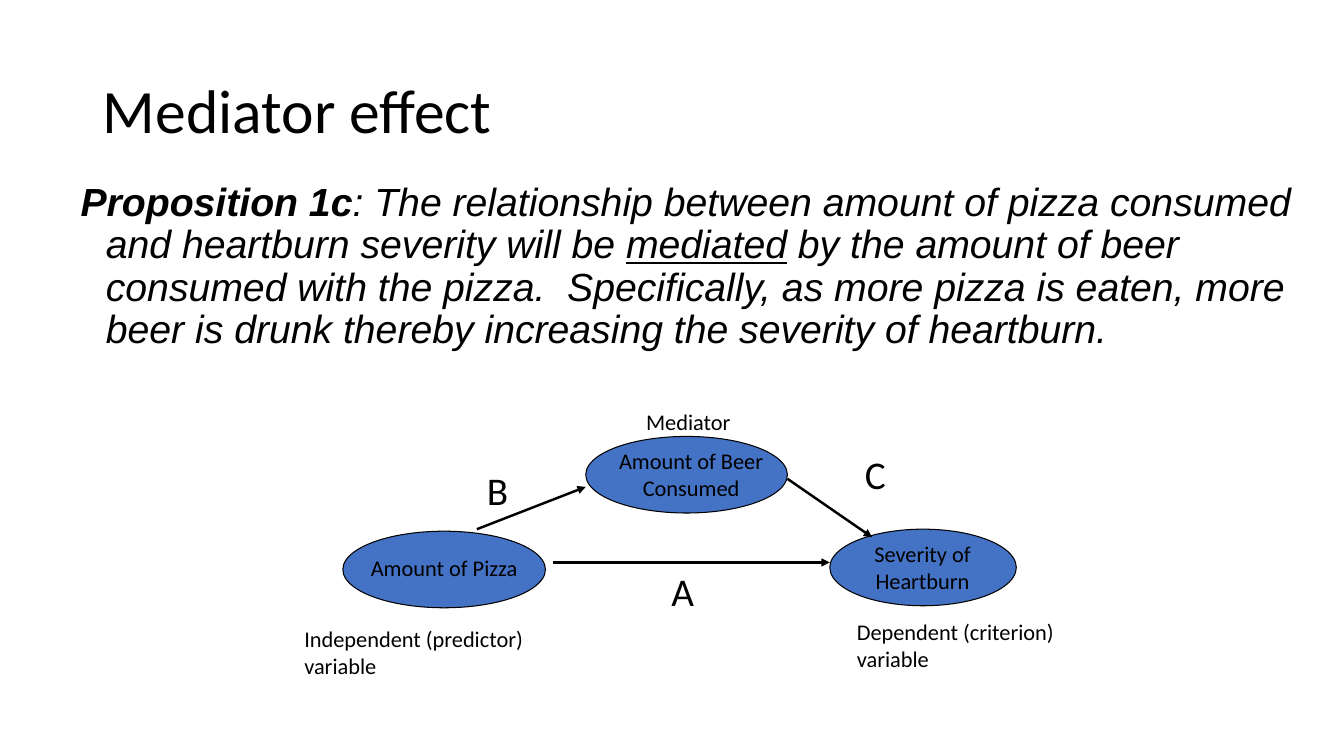
from lxml import etree
from pptx import Presentation
from pptx.dml.color import RGBColor
from pptx.enum.shapes import MSO_CONNECTOR, MSO_SHAPE
from pptx.enum.text import MSO_ANCHOR, MSO_AUTO_SIZE, PP_ALIGN
from pptx.oxml.ns import qn
from pptx.util import Inches, Pt

OVAL = MSO_SHAPE.OVAL
LINE = MSO_CONNECTOR.STRAIGHT
MID, TOP = MSO_ANCHOR.MIDDLE, MSO_ANCHOR.TOP
GROW, FIXED = MSO_AUTO_SIZE.SHAPE_TO_FIT_TEXT, MSO_AUTO_SIZE.NONE
LEFT, CENTER = PP_ALIGN.LEFT, PP_ALIGN.CENTER

COLORS = {"ink": "000000", "node": "4472C4"}


class Page:
    def __init__(self, slide):
        self.slide = slide
        self.font = "Calibri"
        self.ink = RGBColor.from_string(COLORS["ink"])
        self.node = RGBColor.from_string(COLORS["node"])

    def style(self, run, size, font=None):
        run.font.size = Pt(size)
        run.font.name = font or self.font
        run.font.color.rgb = self.ink

    def place(self, shape, box):
        shape.left, shape.top, shape.width, shape.height = map(Inches, box)

    def title(self, text, box):
        shape = self.slide.shapes.title
        self.place(shape, box)
        frame = shape.text_frame
        frame.text = text
        frame.auto_size = FIXED
        frame.vertical_anchor = MID
        para = frame.paragraphs[0]
        para.alignment = LEFT
        para.line_spacing = 0.9
        self.style(para.runs[0], 44)

    def body(self, parts, box):
        shape = self.slide.placeholders[1]
        self.place(shape, box)
        frame = shape.text_frame
        frame.auto_size = FIXED
        frame.vertical_anchor = TOP
        para = frame.paragraphs[0]
        para.alignment = LEFT
        para.line_spacing = 0.9
        para.space_before = Pt(10)
        props = para._p.get_or_add_pPr()
        props.set("marL", str(Inches(0.25)))
        props.set("indent", str(Inches(-0.25)))
        etree.SubElement(props, qn("a:buNone"))
        for text, bold, under in parts:
            run = para.add_run()
            run.text = text
            self.style(run, 28, "Arial")
            run.font.italic = True
            run.font.bold = bold
            run.font.underline = under

    def oval(self, box):
        shape = self.slide.shapes.add_shape(OVAL, *map(Inches, box))
        shape.shadow.inherit = False
        shape.fill.solid()
        shape.fill.fore_color.rgb = self.node
        shape.line.color.rgb = self.ink
        shape.line.width = Pt(0.75)

    def label(self, text, box, size=16, align=LEFT):
        shape = self.slide.shapes.add_textbox(*map(Inches, box))
        frame = shape.text_frame
        frame.text = text
        frame.word_wrap = True
        frame.auto_size = GROW
        para = frame.paragraphs[0]
        para.alignment = align
        self.style(para.runs[0], size)

    def arrow(self, start, end):
        link = self.slide.shapes.add_connector(LINE, *map(Inches, start + end))
        link.line.color.rgb = self.ink
        link.line.width = Pt(1.75)
        edge = link.line._get_or_add_ln()
        etree.SubElement(edge, qn("a:tailEnd"), type="triangle")
        etree.SubElement(link._element.spPr, qn("a:effectLst"))


def main():
    deck = Presentation()
    deck.slide_width, deck.slide_height = Inches(13.33), Inches(7.5)
    page = Page(deck.slides.add_slide(deck.slide_layouts[1]))

    page.title("Mediator effect", (0.92, 0.4, 11.5, 1.45))
    page.body([
        ("Proposition 1c", True, False),
        (": The relationship between amount of pizza consumed and heartburn "
         "severity will be ", False, False),
        ("mediated", False, True),
        (" by the amount of beer consumed with the pizza.  Specifically, as "
         "more pizza is eaten, more beer is drunk thereby increasing the "
         "severity of heartburn.", False, False),
    ], (0.7, 1.76, 12.64, 2.41))

    nodes = [
        ("Amount of Pizza", (3.4, 5.27, 2.01, 0.76), (3.48, 5.45, 1.85, 0.37)),
        ("Severity of Heartburn", (8.23, 5.25, 1.85, 0.76), (8.3, 5.31, 1.7, 0.64)),
        ("Amount of Beer Consumed", (5.81, 4.33, 2, 0.76), (5.98, 4.39, 1.75, 0.64)),
    ]
    for text, oval, box in nodes:
        page.oval(oval)
        page.label(text, box, align=CENTER)

    roles = [
        ("Independent (predictor) variable", (2.92, 6.15, 2.73, 0.64)),
        ("Dependent (criterion) variable", (8.4, 6.08, 2.47, 0.64)),
        ("Mediator", (6.31, 4, 1.42, 0.37)),
    ]
    for text, box in roles:
        page.label(text, box)

    paths = [
        ("A", (6.56, 5.58), (5.48, 5.58), (8.23, 5.58)),
        ("B", (4.73, 4.58), (4.73, 5.25), (5.81, 4.83)),
        ("C", (8.48, 4.42), (7.81, 4.75), (8.65, 5.33)),
    ]
    for text, spot, start, end in paths:
        page.arrow(start, end)
        page.label(text, spot + (0.83, 0.57), 28)

    deck.save("out.pptx")


if __name__ == "__main__":
    main()
